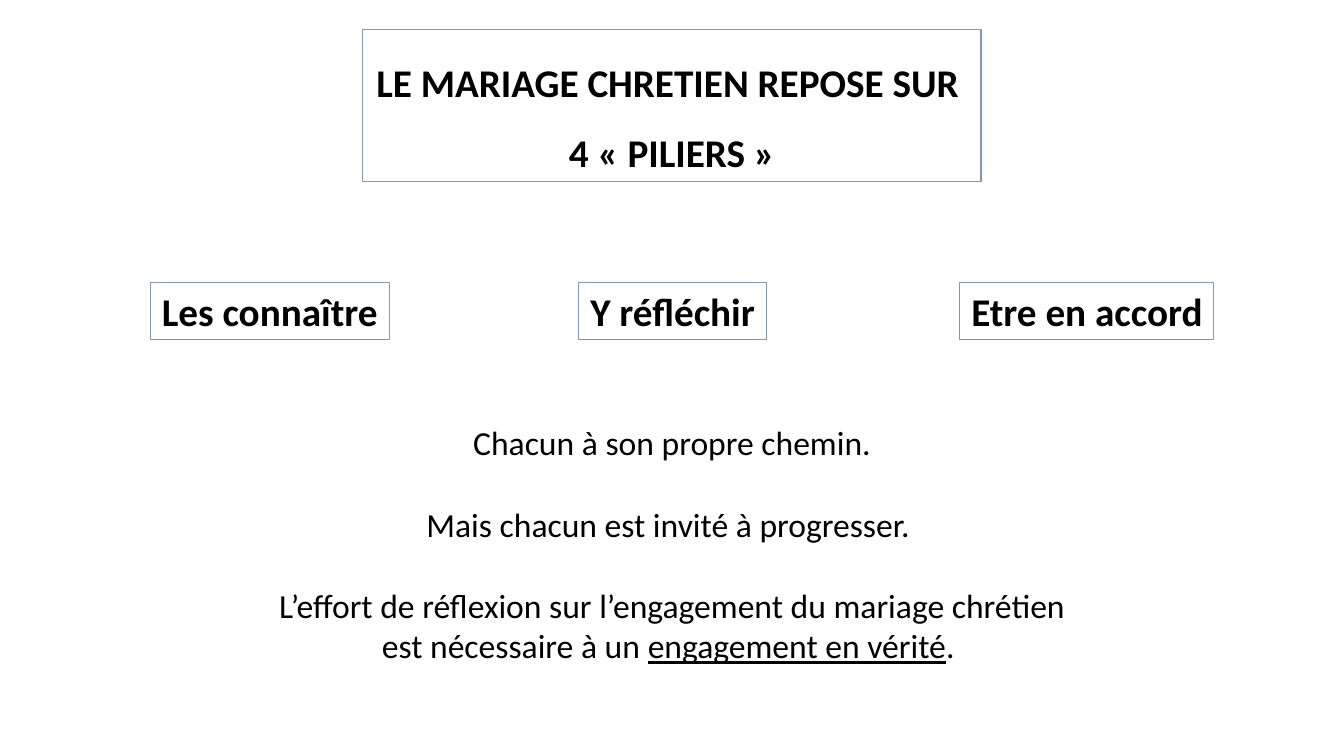
from pptx import Presentation
from pptx.dml.color import RGBColor
from pptx.enum.shapes import MSO_SHAPE
from pptx.enum.text import MSO_ANCHOR, MSO_AUTO_SIZE, PP_ALIGN
from pptx.util import Inches, Pt

FONT = "Calibri"
BLACK = "000000"
BORDER = "8497B0"

TITLE_BOX = (3.6, 0.29, 6.13, 1.51)
TITLE_LINES = ["LE MARIAGE CHRETIEN REPOSE SUR ", "4 «\u00a0PILIERS\u00a0»"]

STEP_TOP, STEP_HEIGHT = 2.8, 0.57
STEPS = [
    ("Les connaître", 1.49, 2.37),
    ("Y réfléchir", 5.74, 1.86),
    ("Etre en accord", 9.52, 2.52),
]

MESSAGE_BOX = (1.11, 4.14, 11.11, 2.52)
MESSAGE_GAP = 29.3
MESSAGE = [
    (0, [("Chacun à son propre chemin.", False)]),
    (MESSAGE_GAP, [("Mais chacun est invité à progresser. ", False)]),
    (MESSAGE_GAP, [("L’effort de réflexion sur l’engagement du mariage chrétien", False)]),
    (0, [("est nécessaire à un ", False), ("engagement en vérité", True), (". ", False)]),
]


def color(value):
    return RGBColor.from_string(value)


def place(shape, box):
    shape.left, shape.top, shape.width, shape.height = map(Inches, box)


def write(shape, paragraphs, size, bold=False, spacing=1.0, wrap=False):
    frame = shape.text_frame
    frame.word_wrap = wrap
    frame.auto_size = MSO_AUTO_SIZE.SHAPE_TO_FIT_TEXT
    frame.vertical_anchor = MSO_ANCHOR.TOP
    for index, (gap, runs) in enumerate(paragraphs):
        paragraph = frame.add_paragraph() if index else frame.paragraphs[0]
        paragraph.alignment = PP_ALIGN.CENTER
        paragraph.line_spacing = spacing
        paragraph.space_before = Pt(gap)
        for text, underlined in runs:
            run = paragraph.add_run()
            run.text = text
            run.font.name = FONT
            run.font.size = Pt(size)
            run.font.bold = bold
            run.font.underline = underlined
            run.font.color.rgb = color(BLACK)


def outline(shape):
    shape.fill.background()
    shape.line.color.rgb = color(BORDER)
    shape.line.width = Pt(0.75)


def main():
    presentation = Presentation()
    presentation.slide_width = Inches(13.33)
    presentation.slide_height = Inches(7.5)
    slide = presentation.slides.add_slide(presentation.slide_layouts[5])

    title = slide.shapes.title
    place(title, TITLE_BOX)
    outline(title)
    write(title, [(0, [(line, False)]) for line in TITLE_LINES], 28, bold=True, spacing=1.5)

    for label, left, width in STEPS:
        step = slide.shapes.add_shape(
            MSO_SHAPE.RECTANGLE, Inches(left), Inches(STEP_TOP), Inches(width), Inches(STEP_HEIGHT)
        )
        step.shadow.inherit = False
        outline(step)
        write(step, [(0, [(label, False)])], 28, bold=True)

    message = slide.shapes.add_textbox(*map(Inches, MESSAGE_BOX))
    write(message, MESSAGE, 24, wrap=True)

    presentation.save("out.pptx")


if __name__ == "__main__":
    main()
